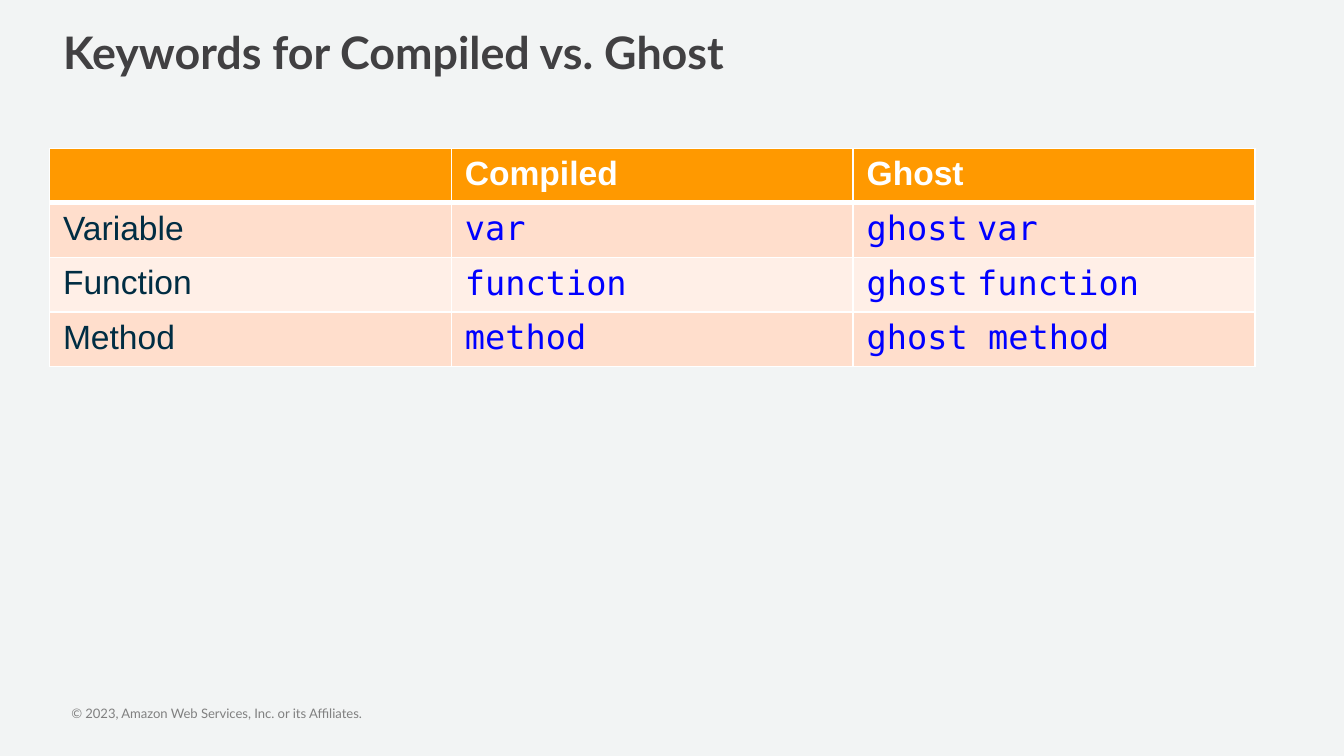
from lxml import etree
from pptx import Presentation
from pptx.dml.color import RGBColor
from pptx.enum import text
from pptx.oxml import ns
from pptx.util import Pt

BACKGROUND = RGBColor(0xF2, 0xF4, 0xF4)
TITLE_GREY = RGBColor(0x41, 0x40, 0x42)
FOOTER_GREY = RGBColor(0x80, 0x80, 0x80)
ORANGE = RGBColor(0xFF, 0x99, 0x00)
PEACH = RGBColor(0xFF, 0xDE, 0xCC)
PALE_PEACH = RGBColor(0xFF, 0xEF, 0xE7)
WHITE = RGBColor(0xFF, 0xFF, 0xFF)
NAVY = RGBColor(0x00, 0x2D, 0x43)
BLUE = RGBColor(0x00, 0x00, 0xFF)

CODE_FONT = "DejaVu Sans Mono"
LEFT, WIDTH = Pt(26.6), Pt(645.8)
ROW_HEIGHT = Pt(29.2)
HEADER = ["", "Compiled", "Ghost"]
KEYWORDS = [
    ["Variable", "var", "ghost var"],
    ["Function", "function", "ghost function"],
    ["Method", "method", "ghost method"],
]
NARROW_SPACED = ("ghost var", "ghost function")


def style_font(font, name, size, color, bold=False):
    font.name = name
    font.size = Pt(size)
    font.bold = bold
    font.color.rgb = color


def add_title(page, words):
    title = page.shapes.title
    title.left, title.top, title.width, title.height = LEFT, Pt(9.4), WIDTH, Pt(43.2)
    frame = title.text_frame
    frame.text = words
    frame.vertical_anchor = text.MSO_ANCHOR.TOP
    frame.auto_size = text.MSO_AUTO_SIZE.NONE
    para = frame.paragraphs[0]
    para.alignment = text.PP_ALIGN.LEFT
    style_font(para.font, "Lato", 24, TITLE_GREY, True)


def add_footer(page, words):
    box = page.shapes.add_textbox(Pt(38.2), Pt(378), Pt(350), Pt(8.6))
    frame = box.text_frame
    frame.word_wrap = True
    frame.margin_left = frame.margin_right = frame.margin_top = frame.margin_bottom = 0
    frame.text = words
    style_font(frame.paragraphs[0].font, "Lato", 7, FOOTER_GREY)


def set_borders(cell, top, bottom):
    properties = cell._tc.get_or_add_tcPr()
    for side, width in (("L", 1), ("R", 1), ("T", top), ("B", bottom)):
        line = etree.SubElement(properties, ns.qn(f"a:ln{side}"), w=str(Pt(width)))
        fill = etree.SubElement(line, ns.qn("a:solidFill"))
        etree.SubElement(fill, ns.qn("a:srgbClr"), val=str(WHITE))


def fill_cell(cell, words, color, font_name, font_color, bold=False):
    cell.fill.solid()
    cell.fill.fore_color.rgb = color
    para = cell.text_frame.paragraphs[0]
    if words in NARROW_SPACED:
        first, second = words.split()
        for part in (first, " ", second):
            span = para.add_run()
            span.text = part
            span.font.name = "Arial" if part == " " else font_name
    else:
        para.text = words
    style_font(para.font, font_name, 18, font_color, bold)


def add_keyword_table(page):
    rows = [HEADER] + KEYWORDS
    frame = page.shapes.add_table(
        len(rows), len(HEADER), LEFT, Pt(79.5), WIDTH, ROW_HEIGHT * len(rows))
    table = frame.table
    for row_index, row in enumerate(rows):
        table.rows[row_index].height = ROW_HEIGHT
        for column_index, words in enumerate(row):
            cell = table.cell(row_index, column_index)
            set_borders(cell, 3 if row_index == 1 else 1, 3 if row_index == 0 else 1)
            band = PEACH if row_index % 2 else PALE_PEACH
            if row_index == 0:
                fill_cell(cell, words, ORANGE, "Arial", WHITE, True)
            elif column_index == 0:
                fill_cell(cell, words, band, "Arial", NAVY)
            else:
                fill_cell(cell, words, band, CODE_FONT, BLUE)


def main():
    deck = Presentation()
    deck.slide_width, deck.slide_height = Pt(720), Pt(405)
    page = deck.slides.add_slide(deck.slide_layouts[5])
    page.background.fill.solid()
    page.background.fill.fore_color.rgb = BACKGROUND
    add_footer(page, "© 2023, Amazon Web Services, Inc. or its Affiliates.")
    add_title(page, "Keywords for Compiled vs. Ghost")
    add_keyword_table(page)
    deck.save("out.pptx")


if __name__ == "__main__":
    main()
